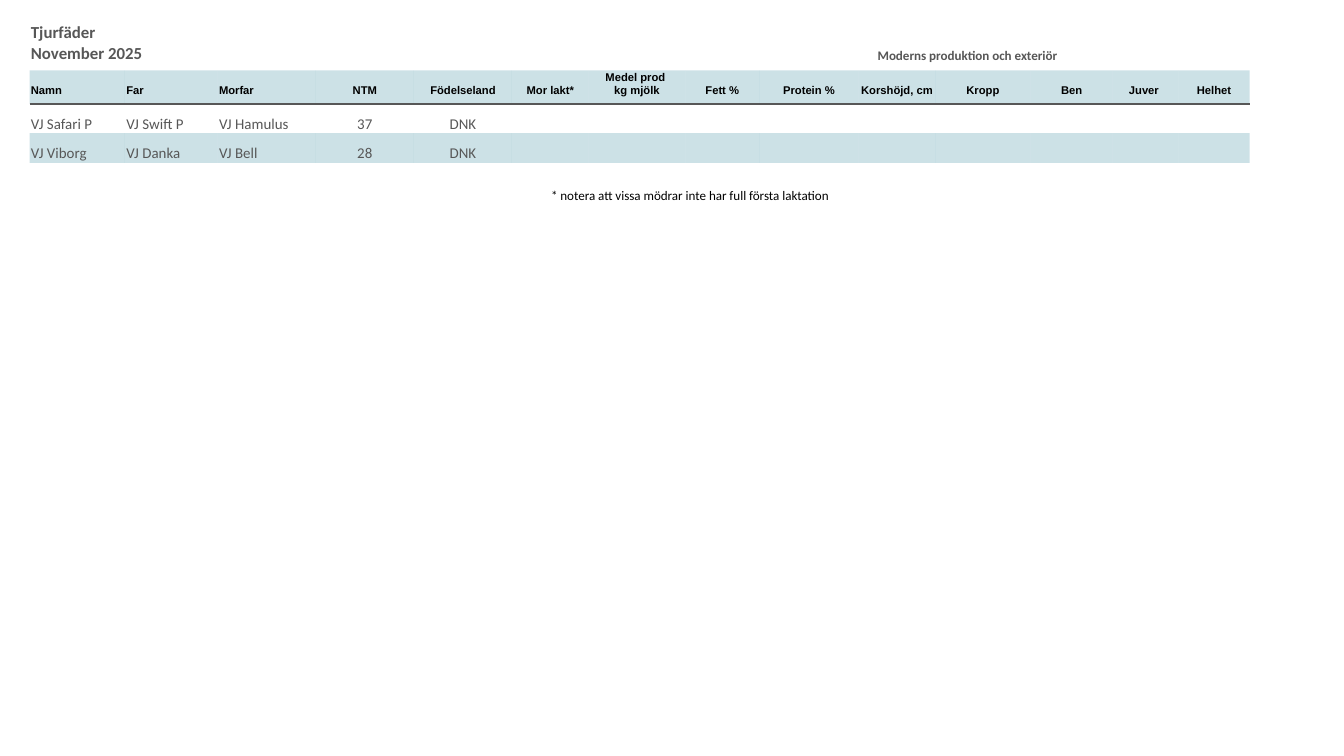
"""Build the November 2025 bull sires table slide."""
from dataclasses import dataclass, field

from lxml import etree
from pptx import Presentation
from pptx.dml.color import RGBColor
from pptx.enum.text import MSO_ANCHOR, PP_ALIGN
from pptx.oxml.ns import qn
from pptx.slide import Slide
from pptx.table import Table, _Cell
from pptx.util import Inches, Pt

LEFT, CENTER = PP_ALIGN.LEFT, PP_ALIGN.CENTER
BOTTOM = MSO_ANCHOR.BOTTOM
COLORS = {"text": "575757", "black": "000000", "band": "006B85"}
BAND_ALPHA = 20000
PLAIN_STYLE = "{2D5ABB26-0587-4C30-8999-92F81FD0307C}"
SIDES = ("a:lnL", "a:lnR", "a:lnT", "a:lnB")
BLANK_LAYOUT = 6
LEFT_COLUMNS = 3
ROW_HEIGHT = 0.22


@dataclass(frozen=True)
class RowStyle:
    """Look shared by all cells of a table row."""

    size: float
    font: str
    color: str
    bold: bool = False
    bottom_margin: float = 0
    banded: bool = False
    border: str = ""


@dataclass(frozen=True)
class Row:
    """Texts of a row by column, with its style, merges and special sizes."""

    style: RowStyle
    texts: dict[int, str]
    spans: tuple[tuple[int, int], ...] = ()
    sizes: dict[int, float] = field(default_factory=dict)


COLUMN_WIDTHS = (0.71, 0.69, 0.73, 0.73, 0.73, 0.57, 0.72,
                 0.55, 0.74, 0.57, 0.71, 0.61, 0.49, 0.53)
HEADINGS = ("Namn", "Far", "Morfar", "NTM", "Födelseland", "Mor lakt*",
            "Medel prod \nkg mjölk", "Fett %", "Protein %", "Korshöjd, cm",
            "Kropp", "Ben", "Juver ", "Helhet")
SAFARI = ("VJ Safari P", "VJ Swift P", "VJ Hamulus", "37", "DNK")
VIBORG = ("VJ Viborg", "VJ Danka", "VJ Bell", "28", "DNK")

SIRE_ROWS = (
    Row(RowStyle(9, "Calibri", "text", True, 0.05),
        {0: "Tjurfäder\nNovember 2025", 7: "Moderns produktion och exteriör"},
        ((0, 1), (5, 6), (7, 13)), {7: 7}),
    Row(RowStyle(6, "Arial", "black", True, 0.05, True, "a:lnB"),
        dict(enumerate(HEADINGS))),
    Row(RowStyle(8, "Calibri", "text", border="a:lnT"),
        dict(enumerate(SAFARI))),
    Row(RowStyle(8, "Calibri", "text", banded=True),
        dict(enumerate(VIBORG))),
)
NOTE_ROWS = (
    Row(RowStyle(7, "Calibri", "black", bottom_margin=0.05),
        {0: "* notera att vissa mödrar inte har full första laktation"}),
)


def write_text(cell: _Cell, row: Row, column: int) -> None:
    """Write and format the text of a cell."""
    style = row.style
    cell.vertical_anchor = BOTTOM
    cell.margin_left = cell.margin_right = cell.margin_top = Inches(0.01)
    cell.margin_bottom = Inches(style.bottom_margin)
    paragraph = cell.text_frame.paragraphs[0]
    if column not in row.texts:
        paragraph._p.get_or_add_endParaRPr().set("sz", "600")
        return
    paragraph.text = row.texts[column].replace("\n", "\v")
    paragraph.alignment = LEFT if column < LEFT_COLUMNS else CENTER
    for run in paragraph.runs:
        run.font.size = Pt(row.sizes.get(column, style.size))
        run.font.name = style.font
        run.font.bold = style.bold
        run.font.color.rgb = RGBColor.from_string(COLORS[style.color])


def decorate(cell: _Cell, style: RowStyle) -> None:
    """Give a cell its translucent band and its border lines."""
    properties = cell._tc.get_or_add_tcPr()
    if style.banded:
        cell.fill.solid()
        cell.fill.fore_color.rgb = RGBColor.from_string(COLORS["band"])
        color = properties.find(f".//{qn('a:srgbClr')}")
        etree.SubElement(color, qn("a:alpha"), val=str(BAND_ALPHA))
    else:
        cell.fill.background()
    for position, side in enumerate(SIDES):
        line = etree.Element(qn(side), w=str(Pt(1)))
        if side == style.border:
            fill = etree.SubElement(line, qn("a:solidFill"))
            etree.SubElement(fill, qn("a:srgbClr"), val=COLORS["text"])
        else:
            etree.SubElement(line, qn("a:noFill"))
        properties.insert(position, line)


def fill_row(table: Table, index: int, row: Row) -> None:
    """Write one row of a table."""
    table.rows[index].height = Inches(ROW_HEIGHT)
    for first, last in row.spans:
        table.cell(index, first).merge(table.cell(index, last))
    for column in range(len(table.columns)):
        cell = table.cell(index, column)
        write_text(cell, row, column)
        decorate(cell, row.style)


def add_plain_table(slide: Slide, left: float, top: float, height: float,
                    widths: tuple[float, ...], rows: tuple[Row, ...]) -> None:
    """Add a table without a built-in style."""
    frame = slide.shapes.add_table(
        len(rows), len(widths), Inches(left), Inches(top),
        Inches(sum(widths)), Inches(height))
    table = frame.table
    table.first_row = table.horz_banding = False
    table._tbl.tblPr.find(qn("a:tableStyleId")).text = PLAIN_STYLE
    for column, width in zip(table.columns, widths):
        column.width = Inches(width)
    for index, row in enumerate(rows):
        fill_row(table, index, row)
    frame.height = Inches(height)


def main() -> None:
    """Build and save the presentation."""
    presentation = Presentation()
    presentation.slide_width = Inches(10)
    presentation.slide_height = presentation.slide_width * 9 // 16
    slide = presentation.slides.add_slide(
        presentation.slide_layouts[BLANK_LAYOUT])
    add_plain_table(slide, 0.22, 0.16, 1.05, COLUMN_WIDTHS, SIRE_ROWS)
    add_plain_table(slide, 4.09, 1.35, ROW_HEIGHT, (3.58,), NOTE_ROWS)
    presentation.save("out.pptx")


if __name__ == "__main__":
    main()
